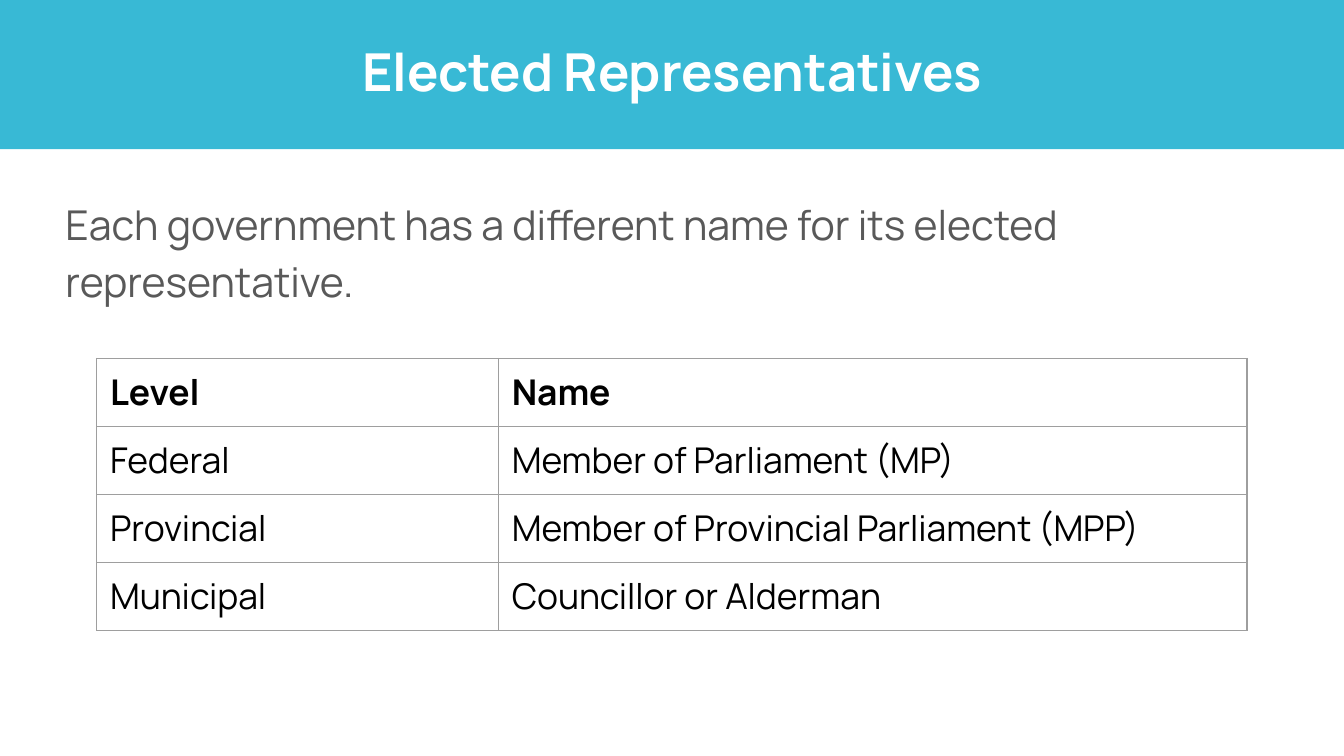
from lxml.etree import SubElement
from pptx import Presentation
from pptx.dml.color import RGBColor
from pptx.enum.text import MSO_ANCHOR, PP_ALIGN
from pptx.oxml.ns import qn
from pptx.util import Pt

TITLE = "Elected Representatives"
INTRO = "Each government has a different name for its elected representative."
ROWS = [
    ("Level", "Name"),
    ("Federal", "Member of Parliament (MP)"),
    ("Provincial", "Member of Provincial Parliament (MPP)"),
    ("Municipal", "Councillor or Alderman"),
]

COLORS = {"banner": "38B9D5", "title": "FFFFFF", "intro": "595959",
          "cell": "000000", "border": "9E9E9E"}
FONT = "Manrope"
PAGE_WIDTH, PAGE_HEIGHT = 720, 405
BANNER_HEIGHT = 80
TABLE_LEFT, TABLE_TOP = 51.75, 192
COLUMN_WIDTHS = (215.25, 401)
ROW_HEIGHT = 36.5


def write(frame, text, size, color, bold=False, align=PP_ALIGN.LEFT, spacing=1.0):
    frame.word_wrap = True
    para = frame.paragraphs[0]
    para.alignment = align
    para.line_spacing = spacing
    span = para.add_run()
    span.text = text
    span.font.name = FONT
    span.font.size = Pt(size)
    span.font.bold = bold
    span.font.color.rgb = RGBColor.from_string(COLORS[color])


def add_box(page, left, top, width, height):
    return page.shapes.add_textbox(Pt(left), Pt(top), Pt(width), Pt(height))


def add_borders(cell):
    properties = cell._tc.get_or_add_tcPr()
    for side in ("lnL", "lnR", "lnT", "lnB"):
        line = SubElement(properties, qn(f"a:{side}"), w=str(Pt(0.75)))
        fill = SubElement(line, qn("a:solidFill"))
        SubElement(fill, qn("a:srgbClr"), val=COLORS["border"])


def add_level_table(page):
    frame = page.shapes.add_table(
        len(ROWS), len(COLUMN_WIDTHS), Pt(TABLE_LEFT), Pt(TABLE_TOP),
        Pt(sum(COLUMN_WIDTHS)), Pt(ROW_HEIGHT * len(ROWS)))
    table = frame.table
    table.horz_banding = False
    for column, width in zip(table.columns, COLUMN_WIDTHS):
        column.width = Pt(width)
    for r, texts in enumerate(ROWS):
        table.rows[r].height = Pt(ROW_HEIGHT)
        for c, text in enumerate(texts):
            cell = table.cell(r, c)
            cell.margin_left = cell.margin_right = Pt(7.2)
            cell.margin_top = cell.margin_bottom = Pt(5)
            add_borders(cell)
            cell.fill.background()
            write(cell.text_frame, text, 19, "cell", bold=r == 0)


deck = Presentation()
deck.slide_width, deck.slide_height = Pt(PAGE_WIDTH), Pt(PAGE_HEIGHT)
page = deck.slides.add_slide(deck.slide_layouts[6])

intro = add_box(page, 28, 99.5, 664.5, 288.5)
write(intro.text_frame, INTRO, 22, "intro", spacing=1.15)

add_level_table(page)

banner = add_box(page, 0, 0, PAGE_WIDTH, BANNER_HEIGHT)
banner.fill.solid()
banner.fill.fore_color.rgb = RGBColor.from_string(COLORS["banner"])
banner.text_frame.vertical_anchor = MSO_ANCHOR.MIDDLE
write(banner.text_frame, TITLE, 28, "title", bold=True,
      align=PP_ALIGN.CENTER, spacing=0.9)

deck.save("out.pptx")
